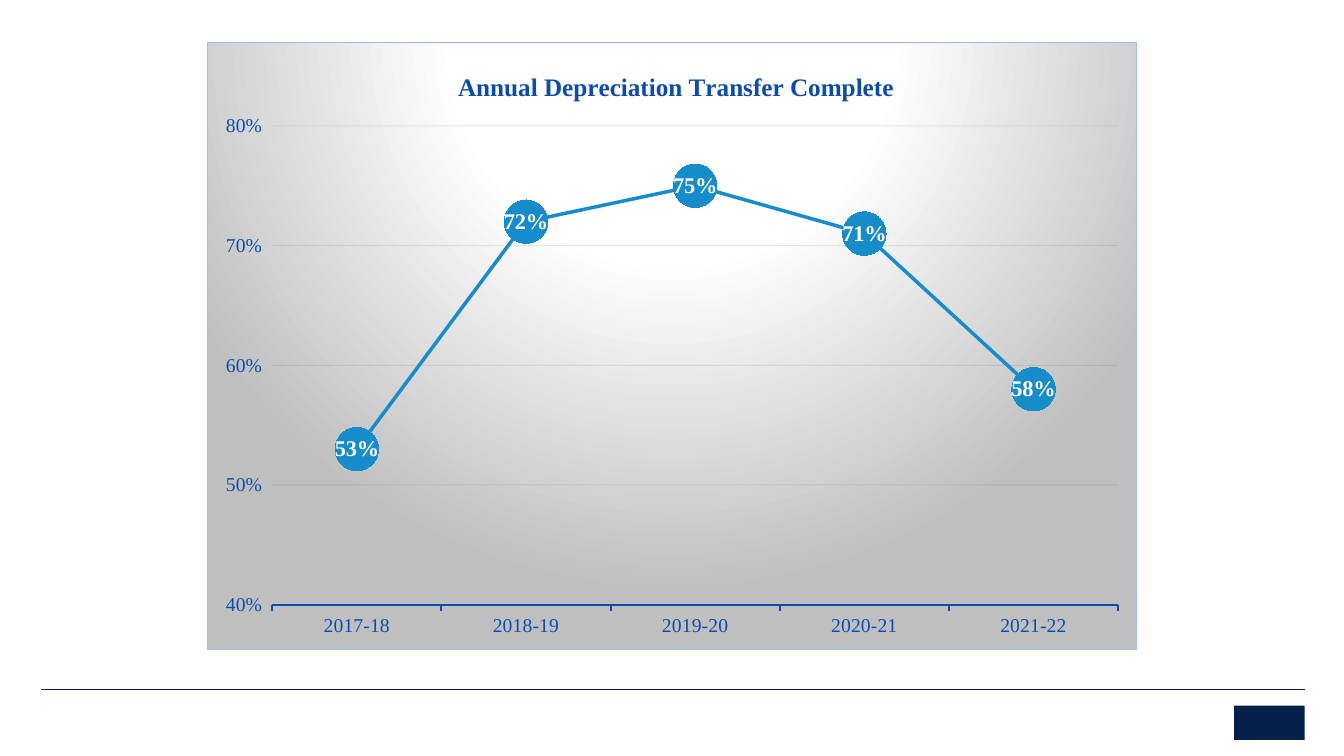
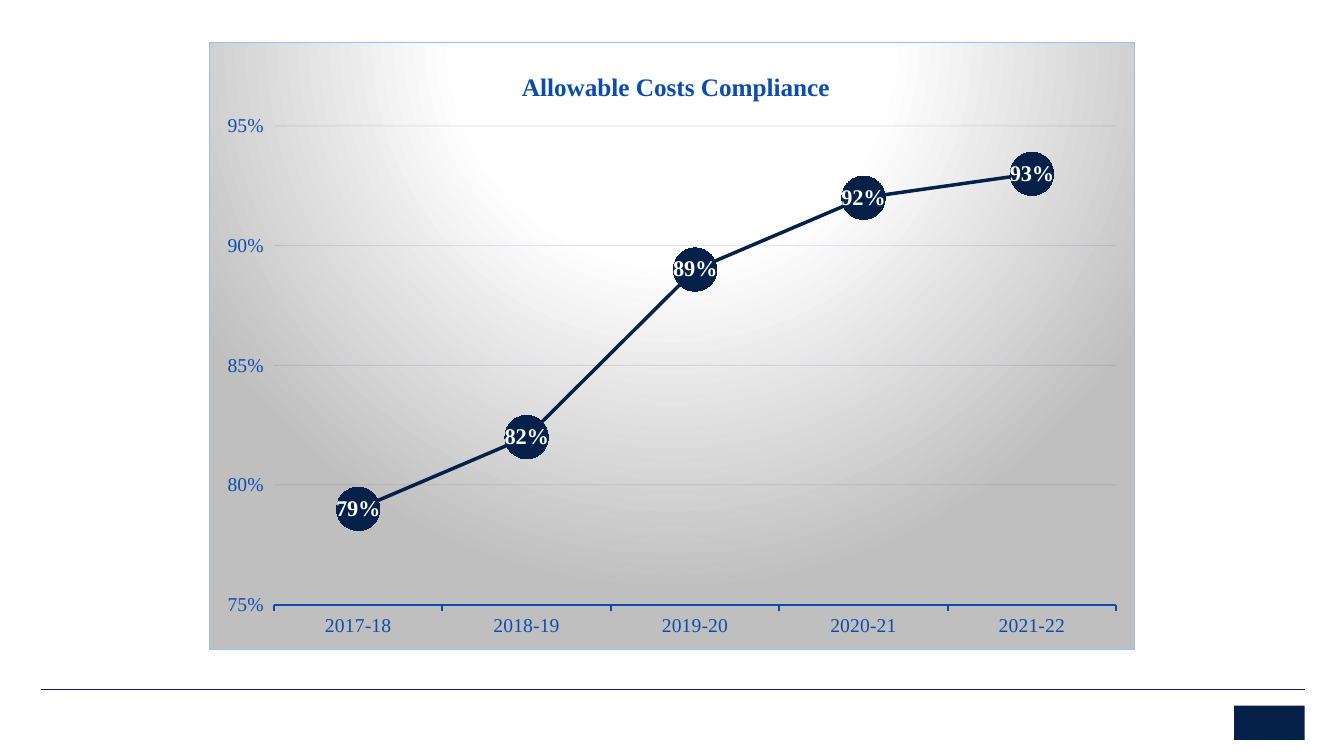
from lxml.etree import SubElement
from pptx import Presentation
from pptx.chart.data import CategoryChartData
from pptx.dml.color import RGBColor
from pptx.enum.chart import XL_CHART_TYPE, XL_LABEL_POSITION, XL_MARKER_STYLE, XL_TICK_MARK
from pptx.enum.shapes import MSO_CONNECTOR, MSO_SHAPE
from pptx.oxml import parse_xml
from pptx.oxml.ns import nsdecls, qn
from pptx.util import Inches, Pt

NAVY = RGBColor(0x05, 0x20, 0x49)
BLUE = RGBColor(0x0C, 0x4C, 0xAE)
SKY = RGBColor(0x17, 0x8C, 0xCB)
GRID = RGBColor(0x06, 0x29, 0x5D)
PALE_BLUE = RGBColor(0x9A, 0xBF, 0xF8)
SILVER = RGBColor(0xBF, 0xBF, 0xBF)
WHITE = RGBColor(0xFF, 0xFF, 0xFF)
FONT = "Times New Roman"

# Content
YEARS = ["2017-18", "2018-19", "2019-20", "2020-21", "2021-22"]
TRENDS = [
    {"title": "Annual Depreciation Transfer Complete", "title_left": 0.265,
     "rates": [0.53, 0.72, 0.75, 0.71, 0.58], "scale": (0.4, 0.8, 0.1),
     "color": SKY, "width": 9.23},
    {"title": "Allowable Costs Compliance", "title_left": 0.333,
     "rates": [0.79, 0.82, 0.89, 0.92, 0.93], "scale": (0.75, 0.95, 0.05),
     "color": NAVY, "width": 9.19},
]

# Geometry: slide and chart in inches, title and plot as shares of the chart
SLIDE_W, SLIDE_H = 13.33, 7.5
CHART_TOP, CHART_H = 0.42, 6.03
TITLE_TOP = 0.04
PLOT = {"x": 0.07, "y": 0.137, "w": 0.91, "h": 0.789}
RULE_LEFT, RULE_RIGHT, RULE_Y = 0.41, 12.94, 6.84
MARK_BOX = (12.24, 7, 0.7, 0.34)


def style_font(font, size, color, bold=False):
    font.name, font.size, font.bold = FONT, Pt(size), bold
    font.color.rgb = color


def style_line(line, color, width):
    line.color.rgb, line.width = color, Pt(width)


def set_layout(parent, index, shares, inner=False):
    for old in parent.findall(qn("c:layout")):
        parent.remove(old)
    layout = parse_xml(f"<c:layout {nsdecls('c')}><c:manualLayout/></c:layout>")
    settings = {"layoutTarget": "inner"} if inner else {}
    settings |= {"xMode": "edge", "yMode": "edge"} | shares
    for tag, value in settings.items():
        SubElement(layout[0], qn(f"c:{tag}")).set("val", str(value))
    parent.insert(index, layout)


def add_background(chart):
    stops = "".join(f'<a:gs pos="{share * 1000}"><a:srgbClr val="{color}"/></a:gs>'
                    for share, color in ((0, WHITE), (39, WHITE), (100, SILVER)))
    background = parse_xml(
        f'<c:spPr {nsdecls("c", "a")}><a:gradFill><a:gsLst>{stops}</a:gsLst>'
        '<a:path path="circle"><a:fillToRect l="50000" t="-80000" r="50000" b="180000"/>'
        f'</a:path></a:gradFill><a:ln w="{Pt(0.75)}"><a:solidFill>'
        f'<a:srgbClr val="{PALE_BLUE}"/></a:solidFill></a:ln></c:spPr>')
    chart.element.find(qn("c:chart")).addnext(background)


def style_axes(chart, scale):
    years, rates = chart.category_axis, chart.value_axis
    for axis in (years, rates):
        axis.major_tick_mark = XL_TICK_MARK.OUTSIDE
        axis.minor_tick_mark = XL_TICK_MARK.NONE
        style_font(axis.tick_labels.font, 14, BLUE)
    style_line(years.format.line, BLUE, 1.5)
    rates.format.line.fill.background()
    rates.minimum_scale, rates.maximum_scale, rates.major_unit = scale
    rates.tick_labels.number_format = "0%"
    rates.tick_labels.number_format_is_linked = False
    style_line(rates.major_gridlines.format.line, GRID, 0.75)
    for color in chart.element.xpath(".//c:majorGridlines//a:srgbClr"):
        SubElement(color, qn("a:alpha")).set("val", "10000")


def style_series(series, color):
    series.smooth = False
    style_line(series.format.line, color, 2.5)
    marker = series.marker
    marker.style, marker.size = XL_MARKER_STYLE.CIRCLE, 31
    marker.format.fill.solid()
    marker.format.fill.fore_color.rgb = color
    marker.format.line.fill.background()
    labels = series.data_labels
    labels.show_value = True
    labels.number_format, labels.number_format_is_linked = "0%", False
    labels.position = XL_LABEL_POSITION.CENTER
    style_font(labels.font, 16, WHITE, True)


def add_trend(slide, trend):
    data = CategoryChartData(number_format="0%")
    data.categories = YEARS
    data.add_series("Series 1", trend["rates"])
    left = (SLIDE_W - trend["width"]) / 2
    box = map(Inches, (left, CHART_TOP, trend["width"], CHART_H))
    chart = slide.shapes.add_chart(XL_CHART_TYPE.LINE_MARKERS, *box, data).chart
    chart.has_legend = False
    style_font(chart.font, 10, NAVY)
    chart.plots[0].vary_by_categories = False

    title = chart.chart_title
    title.text_frame.text = trend["title"]
    style_font(title.text_frame.paragraphs[0].runs[0].font, 18, BLUE, True)
    title.include_in_layout = False
    set_layout(title.element, 1, {"x": trend["title_left"], "y": TITLE_TOP})
    set_layout(chart.element.find(".//" + qn("c:plotArea")), 0, PLOT, inner=True)

    add_background(chart)
    style_axes(chart, trend["scale"])
    style_series(chart.plots[0].series[0], trend["color"])


def add_footer(slide):
    ends = map(Inches, (RULE_LEFT, RULE_Y, RULE_RIGHT, RULE_Y))
    rule = slide.shapes.add_connector(MSO_CONNECTOR.STRAIGHT, *ends)
    style_line(rule.line, NAVY, 0.25)
    SubElement(rule.element.spPr, qn("a:effectLst"))
    # Plain block in the emblem's place
    block = slide.shapes.add_shape(MSO_SHAPE.RECTANGLE, *map(Inches, MARK_BOX))
    block.shadow.inherit = False
    block.fill.solid()
    block.fill.fore_color.rgb = NAVY
    block.line.fill.background()


def main():
    deck = Presentation()
    deck.slide_width, deck.slide_height = Inches(SLIDE_W), Inches(SLIDE_H)
    for trend in TRENDS:
        slide = deck.slides.add_slide(deck.slide_layouts[6])
        add_footer(slide)
        add_trend(slide, trend)
    deck.save("out.pptx")


if __name__ == "__main__":
    main()
